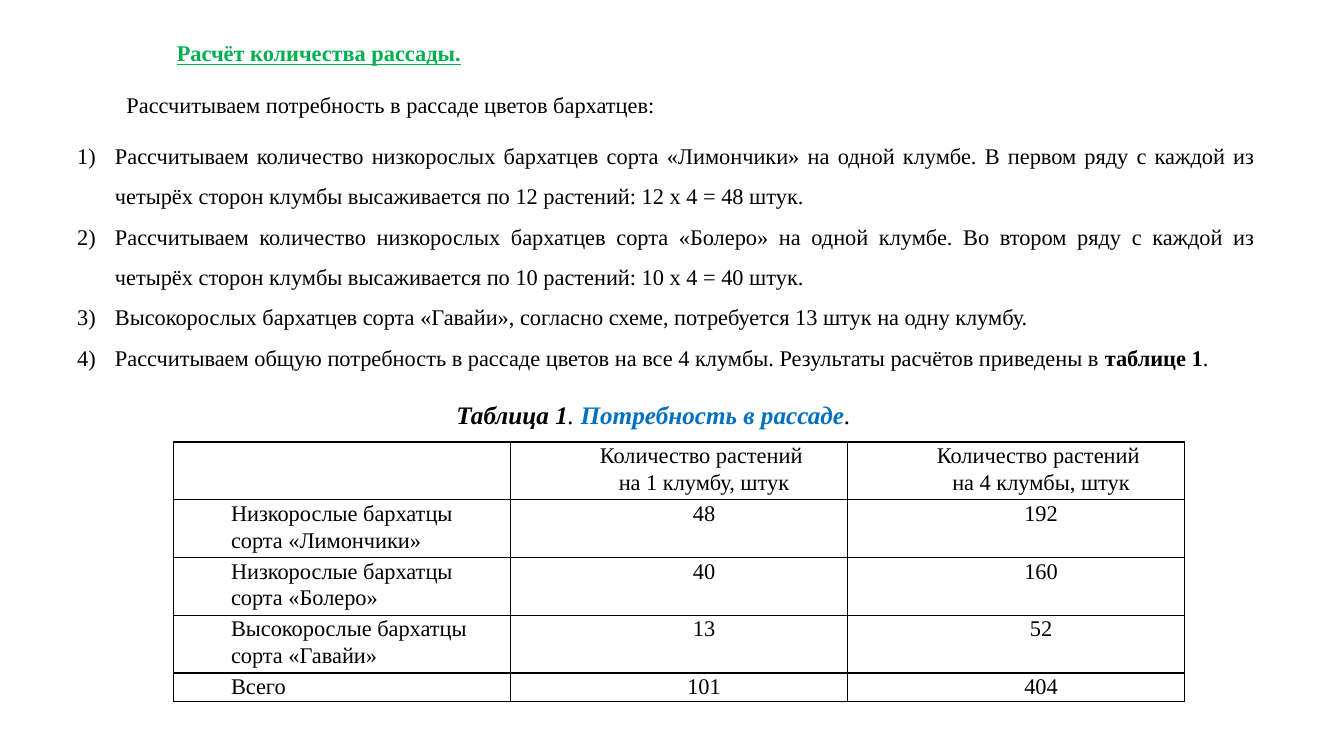
from lxml.etree import SubElement
from pptx import Presentation
from pptx.dml.color import RGBColor
from pptx.enum.text import MSO_ANCHOR as Anchor, PP_ALIGN as Align
from pptx.oxml.ns import qn
from pptx.util import Pt

PX = 9525
BLACK, GREEN, BLUE = "000000", "00B050", "0070C0"


def write(para, text, size=16, color=BLACK, bold=False, italic=False, under=False):
    run = para.add_run()
    run.text = text
    font = run.font
    font.name, font.size = "Times New Roman", Pt(size)
    font.bold, font.italic, font.underline = bold, italic, under
    font.color.rgb = RGBColor.from_string(color)


def setup(para, align, left=0, first=0, line=1.0, after=0):
    """Set alignment, indents in px and spacing; return the properties element."""
    para.alignment, para.line_spacing = align, line
    para.space_before, para.space_after = Pt(0), Pt(after)
    props = para._p.get_or_add_pPr()
    props.set("marL", str(left * PX))
    props.set("indent", str(first * PX))
    return props


prs = Presentation()
prs.slide_width, prs.slide_height = 1280 * PX, 720 * PX
slide = prs.slides.add_slide(prs.slide_layouts[6])
shapes = slide.shapes

# Heading, lead and numbered steps
body = shapes.add_textbox(64 * PX, 20 * PX, 1141 * PX, 342 * PX).text_frame
body.word_wrap = True
head = body.paragraphs[0]
setup(head, Align.JUSTIFY, left=48, first=47, line=1.5, after=8)
write(head, "Расчёт количества рассады.", color=GREEN, bold=True, under=True)
lead = body.add_paragraph()
setup(lead, Align.JUSTIFY, first=47, line=1.5, after=8)
write(lead, "Рассчитываем потребность в рассаде цветов бархатцев:")

steps = [
    "Рассчитываем количество низкорослых бархатцев сорта «Лимончики» на одной клумбе. "
    "В первом ряду с каждой из четырёх сторон клумбы высаживается по 12 растений: 12 х 4 = 48 штук.",
    "Рассчитываем количество низкорослых бархатцев сорта «Болеро» на одной клумбе. "
    "Во втором ряду с каждой из четырёх сторон клумбы высаживается по 10 растений: 10 х 4 = 40 штук.",
    "Высокорослых бархатцев сорта «Гавайи», согласно схеме, потребуется 13 штук на одну клумбу.",
    "Рассчитываем общую потребность в рассаде цветов на все 4 клумбы. "
    "Результаты расчётов приведены в ",
]
for step in steps:
    para = body.add_paragraph()
    props = setup(para, Align.JUSTIFY, left=36, first=-36, line=1.5)
    SubElement(props, qn("a:buFont"), typeface="+mj-lt")
    SubElement(props, qn("a:buAutoNum"), type="arabicParenR")
    write(para, step)
para.space_after = Pt(8)
write(para, "таблице 1", bold=True)
write(para, ".")

# Table of seedlings
rows = [
    ("", "Количество растений \nна 1 клумбу, штук", "Количество растений \nна 4 клумбы, штук"),
    ("Низкорослые бархатцы сорта «Лимончики»", "48", "192"),
    ("Низкорослые бархатцы сорта «Болеро»", "40", "160"),
    ("Высокорослые бархатцы сорта «Гавайи»", "13", "52"),
    ("Всего", "101", "404"),
]
table = shapes.add_table(5, 3, 165 * PX, 421 * PX, 963 * PX, 247 * PX).table
table.first_row = table.horz_banding = False
for col in table.columns:
    col.width = 321 * PX
for row, high in zip(table.rows, [55, 55, 55, 55, 27]):
    row.height = high * PX

for r, row in enumerate(rows):
    for c, text in enumerate(row):
        cell = table.cell(r, c)
        cell.margin_left = cell.margin_right = 7 * PX
        cell.margin_top = cell.margin_bottom = 0
        frame = cell.text_frame
        for i, line in enumerate(text.split("\n")):
            para = frame.add_paragraph() if i else frame.paragraphs[0]
            setup(para, Align.CENTER if c else Align.LEFT, left=48, line=1.07)
            if line:
                write(para, line)
        props = cell._tc.get_or_add_tcPr()
        for side in ("lnL", "lnR", "lnT", "lnB"):
            edge = SubElement(props, qn("a:" + side), w=str(Pt(1)))
            fill = SubElement(edge, qn("a:solidFill"))
            SubElement(fill, qn("a:srgbClr"), val=BLACK)
        cell.fill.background()

# Table caption
label = shapes.add_textbox(136 * PX, 376 * PX, 973 * PX, 38 * PX).text_frame
label.word_wrap = True
label.vertical_anchor = Anchor.MIDDLE
para = label.paragraphs[0]
setup(para, Align.CENTER)
for text, color, bold in [
    ("Таблица 1", BLACK, True),
    (". ", BLACK, False),
    ("Потребность в рассаде", BLUE, True),
    (".", BLACK, False),
]:
    write(para, text, size=18, color=color, bold=bold, italic=True)

prs.save("out.pptx")
